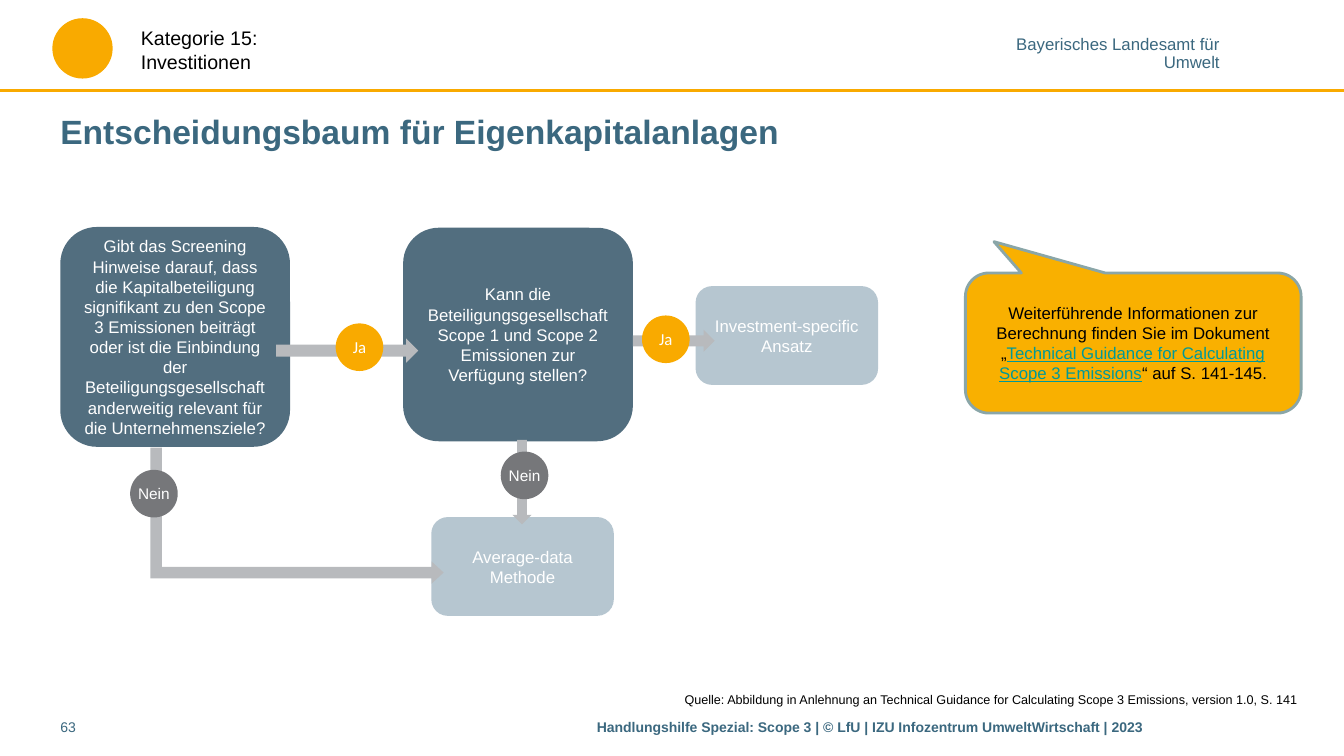
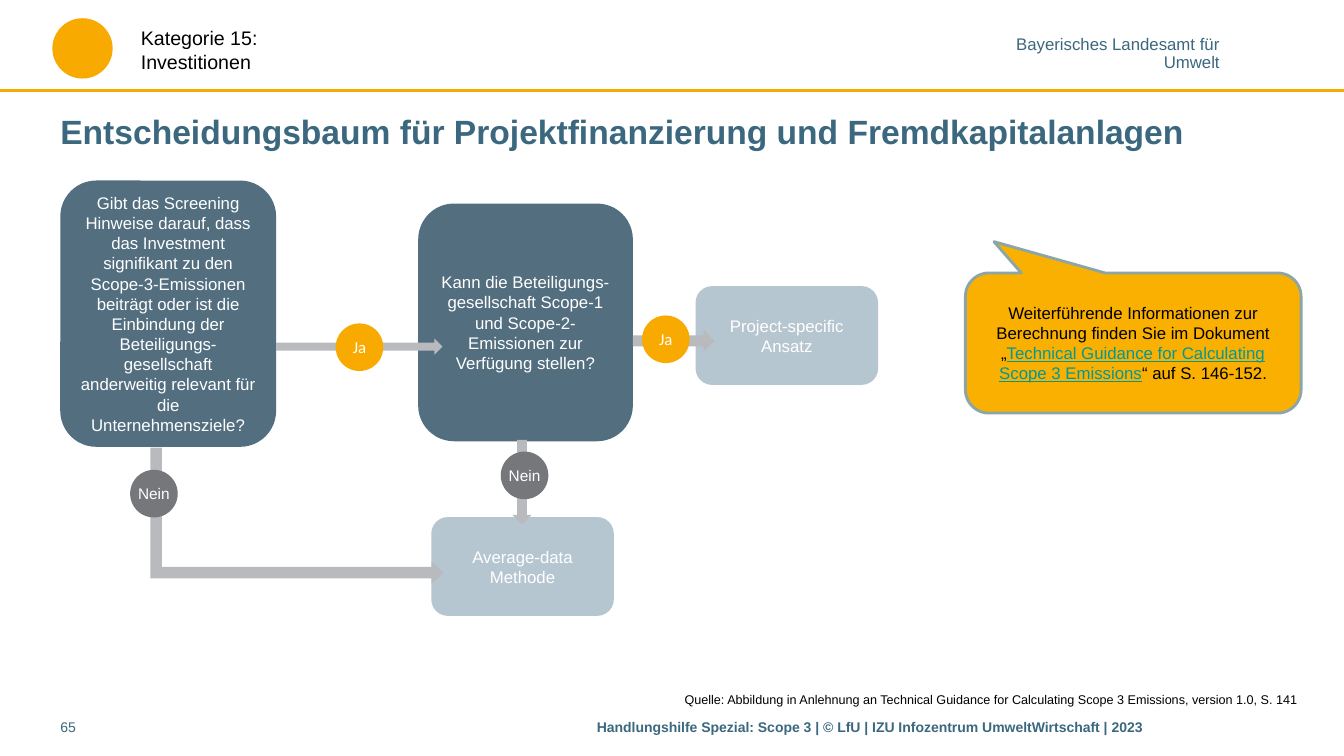
from dataclasses import dataclass

from lxml import etree
from pptx import Presentation
from pptx import util as u
from pptx.dml.color import RGBColor
from pptx.enum import shapes, text
from pptx.oxml.ns import qn

Cm, Pt = u.Cm, u.Pt
SHAPE, ALIGN, ANCHOR = shapes.MSO_SHAPE, text.PP_ALIGN, text.MSO_ANCHOR


# Theme: colours, fonts and type sizes
@dataclass(frozen=True)
class Theme:
    blue: str = "3B687F"
    question: str = "526E7F"
    method: str = "B6C6D0"
    arrow: str = "B8BABD"
    yes: str = "F9AA00"
    no: str = "76777A"
    note: str = "F9B000"
    note_line: str = "8AA6A8"
    link: str = "009999"
    black: str = "000000"
    white: str = "FFFFFF"
    font: str = "Arial"
    yes_font: str = "Calibri"
    title: int = 24
    category: int = 14
    body: int = 12
    badge: int = 11
    footer: int = 10
    source: int = 9
    line: int = 2


T = Theme()
SLIDE_W, SLIDE_H = 33.87, 19.05
LEFT, CONTENT_W = 1.52, 31.27
BADGE = 1.2

NO_INSET = dict.fromkeys(
    ("margin_left", "margin_right", "margin_top", "margin_bottom"), 0)
FLUSH = dict(margin_left=0, margin_right=0)
MIDDLE = dict(vertical_anchor=ANCHOR.MIDDLE)


# Formatting helpers
def rgb(value):
    return RGBColor.from_string(value)


def apply(obj, values):
    for name, value in values.items():
        setattr(obj, name, value)


def style(size, color, **extra):
    return dict(name=T.font, size=Pt(size), color=color) | extra


def write(tf, paragraphs, base, frame=None, para=None):
    """Each paragraph is a string or a list of (text, font overrides)."""
    apply(tf, dict(word_wrap=True, auto_size=text.MSO_AUTO_SIZE.NONE)
          | (frame or {}))
    for i, content in enumerate(paragraphs):
        p = tf.add_paragraph() if i else tf.paragraphs[0]
        apply(p, para or {})
        runs = [(content, {})] if isinstance(content, str) else content
        for words, overrides in runs:
            r = p.add_run()
            r.text = words
            font = base | overrides
            r.font.color.rgb = rgb(font.pop("color"))
            apply(r.font, font)


# Element kinds
def add_text(s, box, paragraphs, base, frame=None, para=None):
    sp = s.shapes.add_textbox(*map(Cm, box))
    write(sp.text_frame, paragraphs, base, frame, para)


def add_shape(s, kind, box, fill, line=None, adj=()):
    sp = s.shapes.add_shape(kind, *map(Cm, box))
    sp.shadow.inherit = False
    sp.fill.solid()
    sp.fill.fore_color.rgb = rgb(fill)
    if line:
        sp.line.color.rgb = rgb(line)
        sp.line.width = Pt(T.line)
    else:
        sp.line.fill.background()
    for i, value in enumerate(adj):
        sp.adjustments[i] = value
    return sp


def add_node(s, box, fill, words):
    sp = add_shape(s, SHAPE.ROUNDED_RECTANGLE, box, fill)
    write(sp.text_frame, [words], style(T.body, T.white), MIDDLE,
          dict(alignment=ALIGN.CENTER))


def add_badge(s, left, top, is_yes):
    sp = add_shape(s, SHAPE.OVAL, (left, top, BADGE, BADGE),
                   T.yes if is_yes else T.no)
    font = (style(T.body, T.white, name=T.yes_font) if is_yes
            else style(T.badge, T.white))
    write(sp.text_frame, ["Ja" if is_yes else "Nein"], font,
          NO_INSET | MIDDLE, dict(alignment=ALIGN.CENTER))


def add_arrow(s, box, kind=SHAPE.RIGHT_ARROW, rotation=0, adj=()):
    sp = add_shape(s, kind, box, T.arrow, adj=adj)
    sp.rotation = rotation


def add_rule(s, top):
    line = s.shapes.add_connector(shapes.MSO_CONNECTOR.STRAIGHT, 0, Cm(top),
                                  Cm(SLIDE_W), Cm(top))
    line.line.color.rgb = rgb(T.yes)
    line.line.width = Pt(T.line)
    etree.SubElement(line.element.spPr, qn("a:effectLst"))


def add_note(s, pages):
    sp = add_shape(s, SHAPE.ROUNDED_RECTANGULAR_CALLOUT,
                   (24.33, 6.88, 8.46, 3.53), T.note, T.note_line,
                   (-0.415, -0.724, 0.167))
    runs = [
        ("Weiterführende Informationen zur Berechnung finden Sie im "
         "Dokument „", {}),
        ("Technical Guidance for Calculating Scope 3 Emissions",
         dict(color=T.link, underline=True)),
        (f"“ auf S. {pages}.", {}),
    ]
    write(sp.text_frame, [runs], style(T.body, T.black), MIDDLE,
          dict(alignment=ALIGN.CENTER))


# Header, title and footer shared by all slides
def add_frame(s, title, number):
    add_rule(s, 2.29)
    add_text(s, (24.74, 0.94, 6, 0.86),
             ["Bayerisches Landesamt für", "Umwelt"],
             style(T.body, T.blue), NO_INSET,
             dict(alignment=ALIGN.RIGHT, line_spacing=0.85))
    add_shape(s, SHAPE.OVAL, (1.32, 0.46, 1.52, 1.52), T.yes)
    add_text(s, (3.3, 0.53, 14.83, 1.45), ["Kategorie 15:", "Investitionen"],
             style(T.category, T.black))

    sp = s.shapes.title
    apply(sp, dict(left=Cm(LEFT), top=Cm(2.59), width=Cm(CONTENT_W),
                   height=Cm(1.4)))
    write(sp.text_frame, [title], style(T.title, T.blue, bold=True),
          FLUSH | MIDDLE, dict(alignment=ALIGN.LEFT))

    add_text(s, (16.44, 17.3, 16.5, 0.64),
             ["Quelle: Abbildung in Anlehnung an Technical Guidance for "
              "Calculating Scope 3 Emissions, version 1.0, S. 141"],
             style(T.source, T.black), para=dict(alignment=ALIGN.RIGHT))
    add_text(s, (15.04, 17.98, 17.75, 0.79),
             ["Handlungshilfe Spezial: Scope 3 | © LfU | "
              "IZU Infozentrum UmweltWirtschaft | 2023"],
             style(T.footer, T.blue, bold=True), FLUSH)
    add_text(s, (LEFT, 17.98, 1.78, 0.79), [str(number)],
             style(T.footer, T.blue), FLUSH)


# Decision tree: two questions leading to two methods
def add_tree(s, screening, data, method, first_arrow):
    for box, words in (screening, data):
        add_node(s, box, T.question, words)
    for left, top, words in ((17.53, 7.21, method),
                             (10.87, 13.03, "Average-data Methode")):
        add_node(s, (left, top, 4.6, 2.49), T.method, words)

    add_arrow(s, first_arrow)
    add_arrow(s, (15.95, 8.31, 2.06, 0.56))
    add_arrow(s, (12.09, 11.91, 2.13, 0.48), rotation=90)
    add_arrow(s, (5.77, 9.3, 3.43, 7.39), SHAPE.BENT_UP_ARROW, 90,
              (0.084, 0.082, 0.089))

    for left, top, is_yes in ((8.46, 8.15, True), (16.18, 7.95, True),
                              (12.62, 11.38, False), (3.28, 11.84, False)):
        add_badge(s, left, top, is_yes)


# Slide content
SLIDES = [
    dict(
        title="Entscheidungsbaum für Eigenkapitalanlagen",
        number=63,
        pages="141-145",
        tree=dict(
            screening=((LEFT, 5.72, 5.79, 5.54),
                       "Gibt das Screening Hinweise darauf, dass die "
                       "Kapitalbeteiligung signifikant zu den Scope 3 "
                       "Emissionen beiträgt oder ist die Einbindung der "
                       "Beteiligungsgesellschaft anderweitig relevant für "
                       "die Unternehmensziele?"),
            data=((10.16, 5.74, 5.79, 5.38),
                  "Kann die Beteiligungsgesellschaft Scope 1 und Scope 2 "
                  "Emissionen zur Verfügung stellen?"),
            method="Investment-specific Ansatz",
            first_arrow=(6.96, 8.53, 3.58, 0.61),
        ),
    ),
    dict(
        title="Entscheidungsbaum für Projektfinanzierung und "
              "Fremdkapitalanlagen",
        number=65,
        pages="146-152",
        tree=dict(
            screening=((LEFT, 4.55, 5.44, 6.71),
                       "Gibt das Screening Hinweise darauf, dass das "
                       "Investment signifikant zu den Scope-3-Emissionen "
                       "beiträgt oder ist die Einbindung der "
                       "Beteiligungs-gesellschaft anderweitig relevant für "
                       "die Unternehmensziele?"),
            data=((10.54, 5.13, 5.41, 5.99),
                  "Kann die Beteiligungs-gesellschaft Scope-1 und Scope-2- "
                  "Emissionen zur Verfügung stellen?"),
            method="Project-specific Ansatz",
            first_arrow=(6.96, 8.53, 4.19, 0.41),
        ),
    ),
]


def main():
    prs = Presentation()
    apply(prs, dict(slide_width=Cm(SLIDE_W), slide_height=Cm(SLIDE_H)))
    title_only = prs.slide_layouts[5]
    for content in SLIDES:
        s = prs.slides.add_slide(title_only)
        add_frame(s, content["title"], content["number"])
        add_tree(s, **content["tree"])
        add_note(s, content["pages"])
    prs.save("out.pptx")


if __name__ == "__main__":
    main()
